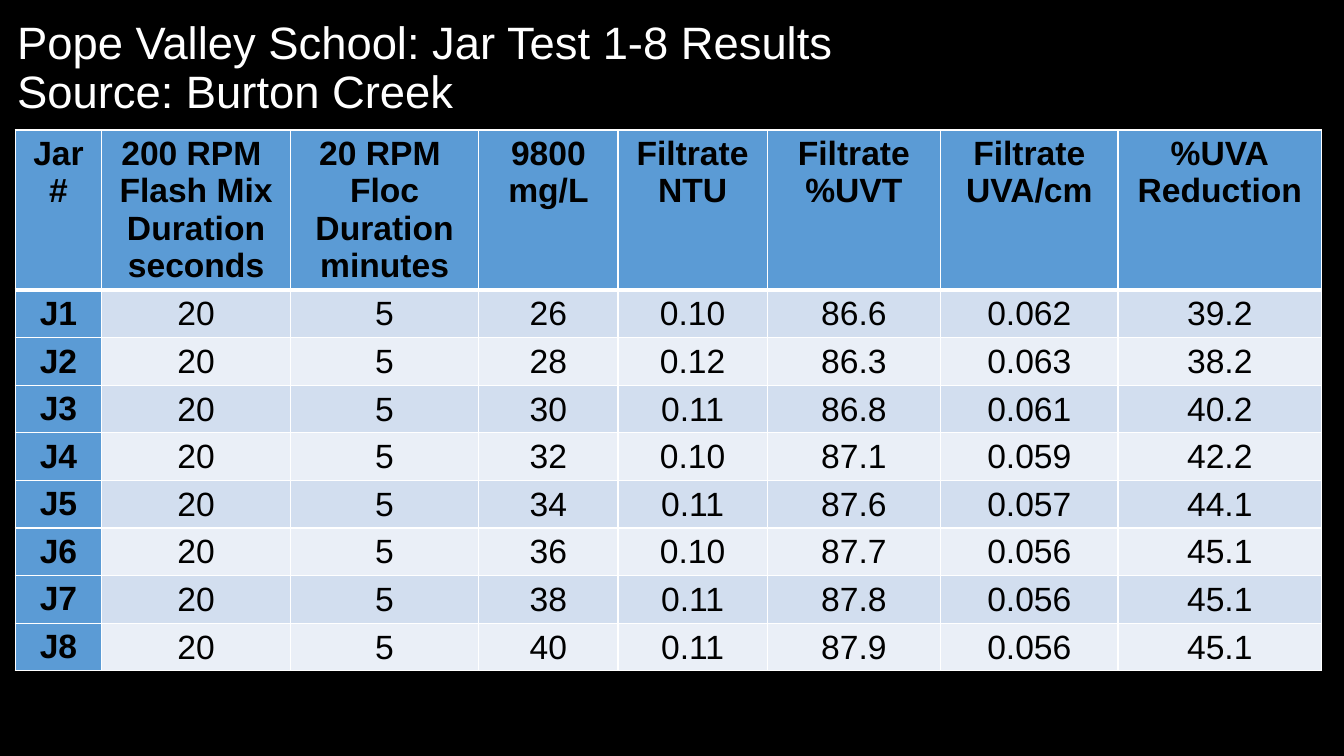
from pptx import Presentation
from pptx.dml.color import RGBColor
from pptx.enum.text import MSO_ANCHOR, PP_ALIGN
from pptx.oxml.ns import qn
from pptx.util import Inches, Pt
from lxml.etree import SubElement

FONT = "Arial"
COLORS = {
    "background": "000000",
    "title": "FFFFFF",
    "text": "000000",
    "border": "FFFFFF",
    "header": "5B9BD5",
    "odd": "D2DEEF",
    "even": "EAEFF7",
}

TITLE = ["Pope Valley School: Jar Test 1-8 Results ", "Source: Burton Creek"]
HEADERS = [
    ["Jar", "#"],
    ["200 RPM ", "Flash Mix", "Duration", "seconds"],
    ["20 RPM ", "Floc", "Duration", "minutes"],
    ["9800", "mg/L"],
    ["Filtrate", "NTU"],
    ["Filtrate", "%UVT"],
    ["Filtrate", "UVA/cm"],
    ["%UVA", "Reduction"],
]
RESULTS = [
    ["J1", "20", "5", "26", "0.10", "86.6", "0.062", "39.2"],
    ["J2", "20", "5", "28", "0.12", "86.3", "0.063", "38.2"],
    ["J3", "20", "5", "30", "0.11", "86.8", "0.061", "40.2"],
    ["J4", "20", "5", "32", "0.10", "87.1", "0.059", "42.2"],
    ["J5", "20", "5", "34", "0.11", "87.6", "0.057", "44.1"],
    ["J6", "20", "5", "36", "0.10", "87.7", "0.056", "45.1"],
    ["J7", "20", "5", "38", "0.11", "87.8", "0.056", "45.1"],
    ["J8", "20", "5", "40", "0.11", "87.9", "0.056", "45.1"],
]
COL_WIDTHS = [0.86, 1.87, 1.87, 1.38, 1.48, 1.72, 1.76, 2.02]
HEADER_HEIGHT, ROW_HEIGHT = 1.58, 0.47


def color(name):
    return RGBColor.from_string(COLORS[name])


def add_run(p, text, size, color_name, bold=False):
    r = p.add_run()
    r.text = text
    r.font.name = FONT
    r.font.size = Pt(size)
    r.font.bold = bold
    r.font.color.rgb = color(color_name)


def add_title(s, lines):
    title = s.shapes.title
    title.left, title.top = Inches(0.07), Inches(0.12)
    title.width, title.height = Inches(13.03), Inches(1.14)
    tf = title.text_frame
    tf.word_wrap = True
    tf.vertical_anchor = MSO_ANCHOR.MIDDLE
    p = tf.paragraphs[0]
    p.alignment = PP_ALIGN.LEFT
    p.line_spacing = 0.9
    for i, line in enumerate(lines):
        if i:
            p.add_line_break()
        add_run(p, line, 32.4, "title")


def set_borders(cell, top, bottom):
    tcPr = cell._tc.get_or_add_tcPr()
    for side, width in (("L", 1), ("R", 1), ("T", top), ("B", bottom)):
        ln = SubElement(tcPr, qn(f"a:ln{side}"), w=str(Pt(width)))
        fill = SubElement(ln, qn("a:solidFill"))
        SubElement(fill, qn("a:srgbClr"), val=COLORS["border"])


def set_margins(cell, left, top, right, bottom):
    cell.margin_left, cell.margin_top = Inches(left), Inches(top)
    cell.margin_right, cell.margin_bottom = Inches(right), Inches(bottom)


def fill_cell(cell, lines, fill, is_label):
    if is_label:
        cell.vertical_anchor = MSO_ANCHOR.TOP
        set_margins(cell, 0.1, 0.05, 0.1, 0.05)
    else:
        cell.vertical_anchor = MSO_ANCHOR.MIDDLE
        set_margins(cell, 0.01, 0.01, 0.01, 0)
    cell.fill.solid()
    cell.fill.fore_color.rgb = color(fill)
    tf = cell.text_frame
    for i, line in enumerate(lines):
        p = tf.add_paragraph() if i else tf.paragraphs[0]
        p.alignment = PP_ALIGN.CENTER
        add_run(p, line, 24, "text", bold=is_label)


def add_results_table(s):
    rows = [HEADERS] + [[[value] for value in row] for row in RESULTS]
    height = HEADER_HEIGHT + ROW_HEIGHT * len(RESULTS)
    table = s.shapes.add_table(
        len(rows), len(COL_WIDTHS), Inches(0.15), Inches(1.29),
        Inches(sum(COL_WIDTHS)), Inches(height)).table
    table.first_col = True
    for column, width in zip(table.columns, COL_WIDTHS):
        column.width = Inches(width)
    for i, row in enumerate(rows):
        table.rows[i].height = Inches(ROW_HEIGHT if i else HEADER_HEIGHT)
        for j, lines in enumerate(row):
            cell = table.cell(i, j)
            is_label = i == 0 or j == 0
            band = "odd" if i % 2 else "even"
            # The rule under the header is thicker than the grid
            set_borders(cell, 3 if i == 1 else 1, 3 if i == 0 else 1)
            fill_cell(cell, lines, "header" if is_label else band, is_label)


def main():
    prs = Presentation()
    prs.slide_width, prs.slide_height = Inches(13.33), Inches(7.5)
    s = prs.slides.add_slide(prs.slide_layouts[5])

    # Background
    s.background.fill.solid()
    s.background.fill.fore_color.rgb = color("background")

    # Title and jar test results
    add_title(s, TITLE)
    add_results_table(s)

    prs.save("out.pptx")


if __name__ == "__main__":
    main()
